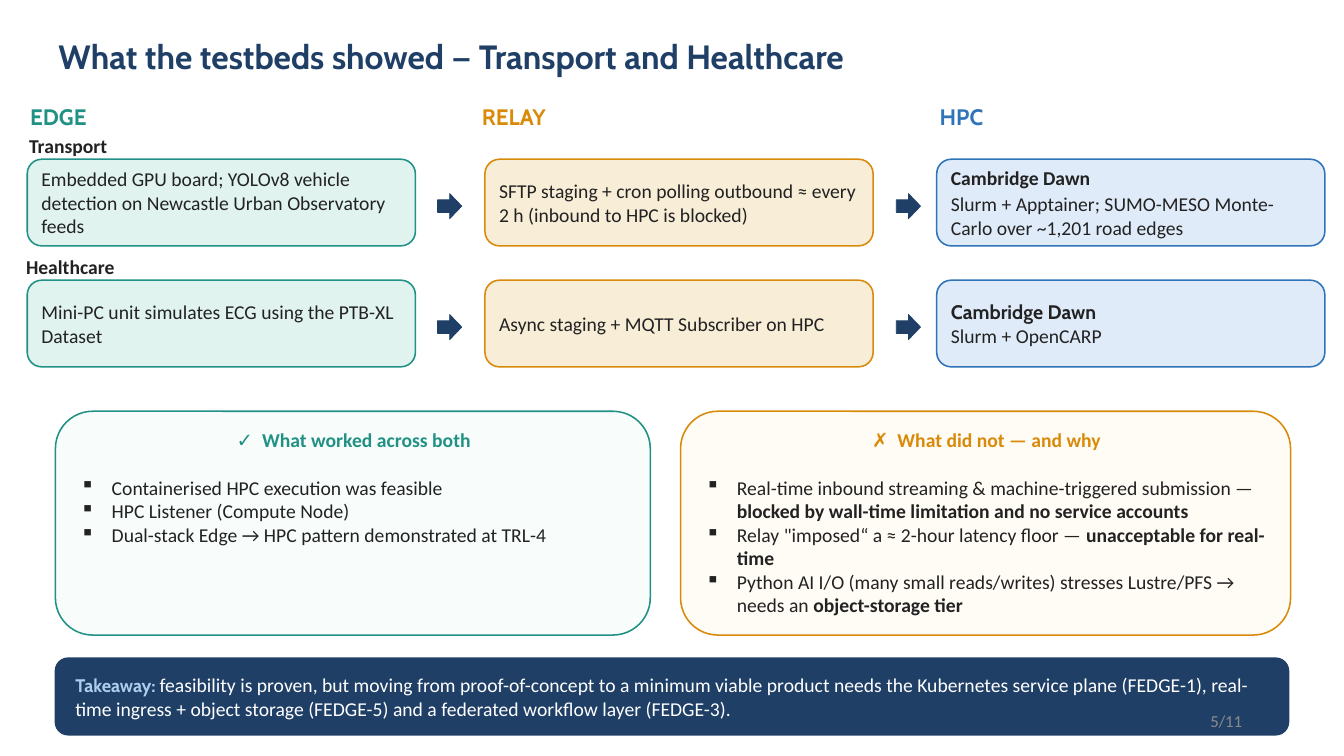
from pptx import Presentation
from pptx.dml.color import RGBColor
from pptx.enum.shapes import MSO_SHAPE
from pptx.enum.text import MSO_ANCHOR, MSO_AUTO_SIZE, PP_ALIGN
from pptx.oxml.ns import qn
from pptx.util import Inches, Pt
from lxml import etree

ROUNDED = MSO_SHAPE.ROUNDED_RECTANGLE
ARROW = MSO_SHAPE.RIGHT_ARROW
TOP, MIDDLE = MSO_ANCHOR.TOP, MSO_ANCHOR.MIDDLE
LEFT, CENTER, RIGHT = PP_ALIGN.LEFT, PP_ALIGN.CENTER, PP_ALIGN.RIGHT

COLORS = {
    "navy": "1F3F67", "green": "209184", "orange": "D88A08", "blue": "2F73B8",
    "green_card": "E0F3EF", "orange_card": "F8EDD7", "blue_card": "E0EBF9",
    "green_panel": "F8FDFB", "orange_panel": "FFFBF5",
    "text": "222222", "sky": "ACCFEE", "white": "FFFFFF", "gray": "8C8C8C",
}

BODY = {"name": "Calibri", "size": Pt(14), "bold": False, "color": "text"}
BOLD = {**BODY, "bold": True}
HEADING = {"name": "Cabin", "size": Pt(16), "bold": True, "color": "navy"}
TITLE = {**HEADING, "size": Pt(24)}
TIGHT = (0.03, 0.01, 0.03, 0.01)
DEFAULT = (0.1, 0.05, 0.1, 0.05)

CARD_SIZE = (3.85, 0.86)
ROW_TOPS = (1.58, 2.78)
ARROW_LEFTS = (4.34, 8.89)
ARROW_DROP = 0.34
LABEL_RISE = 0.3

COLUMNS = [
    ("EDGE", "green", 0.27, 0.27, 0.64),
    ("RELAY", "orange", 4.75, 4.81, 0.71),
    ("HPC", "blue", 9.29, 9.29, 0.52),
]
ROWS = [
    ("Transport", 0.19, [
        [[("Embedded GPU board; YOLOv8 vehicle detection on Newcastle Urban Observatory feeds", BODY)]],
        [[("SFTP staging + cron polling outbound ≈ every 2 h (inbound to HPC is blocked)", BODY)]],
        [[("Cambridge Dawn", BOLD)],
         [("Slurm + Apptainer; SUMO-MESO Monte-Carlo over ~1,201 road edges", BODY)]],
    ]),
    ("Healthcare", 0.16, [
        [[("Mini-PC unit simulates ECG using the PTB-XL Dataset", BODY)]],
        [[("Async staging + MQTT Subscriber on HPC", BODY)]],
        [[("Cambridge Dawn", {**BOLD, "name": "Cabin"})], [("Slurm + OpenCARP", BODY)]],
    ]),
]
PANELS = [
    (0.55, 5.9, "green", "✓  What worked across both", [
        [("Containerised HPC execution was feasible", BODY)],
        [("HPC Listener (Compute Node)", BODY)],
        [("Dual-stack Edge → HPC pattern demonstrated at TRL-4", BODY)],
    ]),
    (6.75, 6.05, "orange", "✗  What did not — and why", [
        [("Real-time inbound streaming & machine-triggered submission — ", BODY),
         ("blocked by wall-time limitation and no service accounts", BOLD)],
        [('Relay "imposed“ a ≈ 2-hour latency floor — ', BODY),
         ("unacceptable for real-time", BOLD)],
        [("Python AI I/O (many small reads/writes) stresses Lustre/PFS → needs an ", BODY),
         ("object-storage tier", BOLD)],
    ]),
]
TAKEAWAY = [
    ("Takeaway: ", {**HEADING, "size": Pt(13), "color": "sky"}),
    ("feasibility is proven, but moving from proof-of-concept to a minimum viable product "
     "needs the Kubernetes service plane (FEDGE-1), real-time ingress + object storage "
     "(FEDGE-5) and a federated workflow layer (FEDGE-3).", {**BODY, "color": "white"}),
]


def rgb(name):
    return RGBColor.from_string(COLORS[name])


def set_attributes(target, values):
    for name, value in values.items():
        setattr(target, name, value)


def place(shape, box):
    set_attributes(shape, dict(zip(("left", "top", "width", "height"), map(Inches, box))))


def add_bullet(paragraph):
    properties = paragraph._p.get_or_add_pPr()
    properties.set("marL", str(Inches(0.31)))
    properties.set("indent", str(-Inches(0.31)))
    etree.SubElement(properties, qn("a:buChar")).set("char", "▪")


def add_runs(paragraph, runs, alignment=LEFT):
    paragraph.alignment = alignment
    for text, style in runs:
        run = paragraph.add_run()
        run.text = text
        set_attributes(run.font, {key: value for key, value in style.items() if key != "color"})
        run.font.color.rgb = rgb(style["color"])


def write(shape, paragraphs, insets=DEFAULT, anchor=TOP, wrap=True, alignment=LEFT):
    frame = shape.text_frame
    sides = ("margin_left", "margin_top", "margin_right", "margin_bottom")
    set_attributes(frame, {
        **dict(zip(sides, map(Inches, insets))),
        "auto_size": MSO_AUTO_SIZE.NONE, "vertical_anchor": anchor, "word_wrap": wrap,
    })
    for index, runs in enumerate(paragraphs):
        paragraph = frame.add_paragraph() if index else frame.paragraphs[0]
        add_runs(paragraph, runs, alignment)
    return frame


def add_label(slide, box, text, style, **layout):
    shape = slide.shapes.add_textbox(*map(Inches, box))
    write(shape, [[(text, style)]], **layout)


def add_block(slide, kind, box, fill, line, width=1.1):
    shape = slide.shapes.add_shape(kind, *map(Inches, box))
    shape.shadow.inherit = False
    shape.fill.solid()
    shape.fill.fore_color.rgb = rgb(fill)
    shape.line.color.rgb = rgb(line)
    shape.line.width = Pt(width)
    return shape


def add_card(slide, left, top, color, paragraphs):
    card = add_block(slide, ROUNDED, (left, top, *CARD_SIZE), f"{color}_card", color)
    frame = write(card, paragraphs, (0.1, 0.04, 0.08, 0.04), MIDDLE)
    if paragraphs[0][0][1] is BOLD:
        frame.paragraphs[0].space_after = Pt(2)


def add_panel(slide, left, width, color, heading, bullets):
    panel = add_block(slide, ROUNDED, (left, 4.08, width, 2.22), f"{color}_panel", color)
    frame = write(panel, [[(heading, {**BOLD, "color": color})]],
                  (0.14, 0.06, 0.12, 0.04), alignment=CENTER)
    frame.paragraphs[0].space_after = Pt(17)
    for runs in bullets:
        paragraph = frame.add_paragraph()
        add_bullet(paragraph)
        add_runs(paragraph, runs)


def main():
    presentation = Presentation()
    presentation.slide_width = Inches(13.33)
    presentation.slide_height = Inches(7.5)
    slide = presentation.slides.add_slide(presentation.slide_layouts[5])

    title = slide.shapes.title
    place(title, (0.55, 0.35, 12.23, 0.5))
    write(title, [[("What the testbeds showed — Transport and Healthcare", TITLE)]], TIGHT)

    for name, color, label_left, _, width in COLUMNS:
        add_label(slide, (label_left, 1.01, width, 0.29), name,
                  {**HEADING, "color": color}, insets=TIGHT, wrap=False)

    for top, (name, label_left, cards) in zip(ROW_TOPS, ROWS):
        add_label(slide, (label_left, top - LABEL_RISE, 1.3, 0.34), name, BOLD)
        for (_, color, _, left, _), paragraphs in zip(COLUMNS, cards):
            add_card(slide, left, top, color, paragraphs)
        for left in ARROW_LEFTS:
            add_block(slide, ARROW, (left, top + ARROW_DROP, 0.24, 0.25), "navy", "navy", 0.5)

    for panel in PANELS:
        add_panel(slide, *panel)

    takeaway = add_block(slide, ROUNDED, (0.55, 6.53, 12.23, 0.76), "navy", "navy")
    write(takeaway, [TAKEAWAY], (0.16, 0.02, 0.16, 0.02), MIDDLE)

    add_label(slide, (9.42, 6.95, 3, 0.4), "5/11",
              {**BODY, "size": Pt(12), "color": "gray"}, anchor=MIDDLE, alignment=RIGHT)

    presentation.save("out.pptx")


if __name__ == "__main__":
    main()
